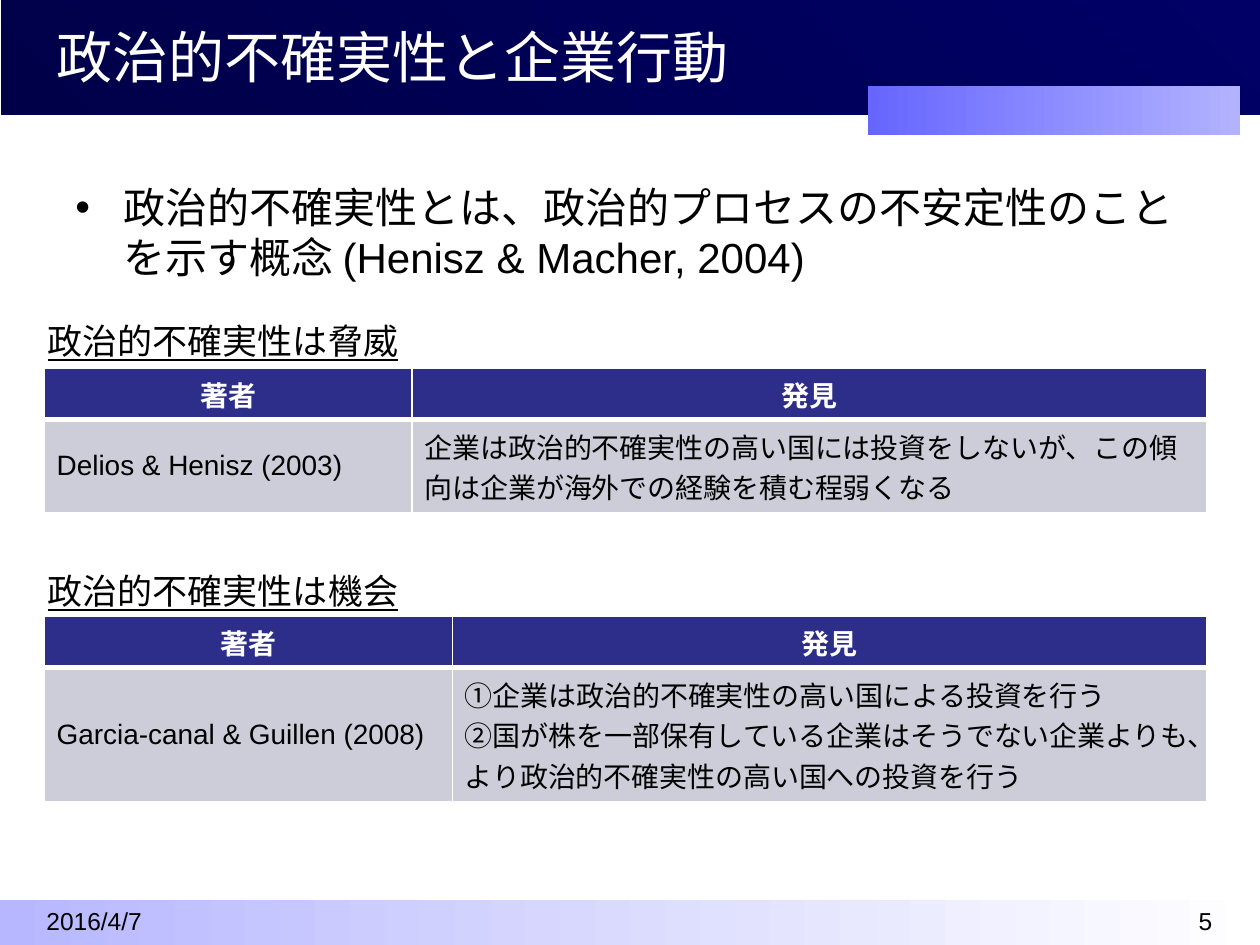
from lxml.etree import SubElement
from pptx import Presentation
from pptx.dml.color import RGBColor
from pptx.enum.shapes import MSO_SHAPE
from pptx.enum.text import MSO_ANCHOR, PP_ALIGN
from pptx.oxml.ns import qn
from pptx.util import Inches, Pt

WHITE = RGBColor(255, 255, 255)
BLACK = RGBColor(0, 0, 0)
HEAD = RGBColor(0x2D, 0x2D, 0x8A)
BODY = RGBColor(0xCD, 0xCD, 0xDA)
NAVY = RGBColor(0, 0, 0x49), RGBColor(0, 0, 0x66)
VIOLET = RGBColor(0x66, 0x66, 0xFF), RGBColor(0xB2, 0xB2, 0xFF)
PALE = RGBColor(0xB7, 0xB7, 0xFF), WHITE

TITLE = "政治的不確実性と企業行動"
POINT = "政治的不確実性とは、政治的プロセスの不安定性のことを示す概念 (Henisz & Macher, 2004)"
DATE, PAGE = "2016/4/7", "5"
HEADERS = "著者", "発見"

# left, top, width, height, gradient colours, angle
BANDS = [
    (0, 7.14, 10, 0.36, PALE, 0),
    (0.01, 0, 9.99, 0.91, NAVY, 45),
    (6.89, 0.68, 2.95, 0.39, VIOLET, 0),
]

LEFT, WIDE, ROW = 0.35, 9.23, 0.41
# caption, caption top, table top, author column, body row, author, findings
STUDIES = [
    ("政治的不確実性は脅威", 2.49, 2.92, 2.92, 0.74, "Delios & Henisz (2003)",
     ["企業は政治的不確実性の高い国には投資をしないが、この傾向は企業が海外での経験を積む程弱くなる"]),
    ("政治的不確実性は機会", 4.47, 4.89, 3.24, 1.06, "Garcia-canal & Guillen (2008)",
     ["①企業は政治的不確実性の高い国による投資を行う",
      "②国が株を一部保有している企業はそうでない企業よりも、より政治的不確実性の高い国への投資を行う"]),
]


def write(frame, lines, size, color=BLACK, align=PP_ALIGN.LEFT, bold=False, line=False):
    frame.word_wrap = True
    for i, words in enumerate(lines):
        para = frame.add_paragraph() if i else frame.paragraphs[0]
        para.alignment = align
        run = para.add_run()
        run.text = words
        font = run.font
        font.name, font.size, font.bold = "Arial", Pt(size), bold
        font.underline = line
        font.color.rgb = color


def box(slide, place, words, size, anchor=MSO_ANCHOR.TOP, **style):
    frame = slide.shapes.add_textbox(*map(Inches, place)).text_frame
    frame.vertical_anchor = anchor
    write(frame, [words], size, **style)
    return frame.paragraphs[0]


def band(slide, place, colors, angle):
    shape = slide.shapes.add_shape(MSO_SHAPE.RECTANGLE, *map(Inches, place))
    shape.shadow.inherit = False
    shape.line.fill.background()
    shape.fill.gradient()
    shape.fill.gradient_angle = angle
    for stop, color in zip(shape.fill.gradient_stops, colors):
        stop.color.rgb = color


def border(cell, **widths):
    props = cell._tc.get_or_add_tcPr()
    for side, width in widths.items():
        edge = SubElement(props, qn(f"a:ln{side}"), w=str(Pt(width)))
        fill = SubElement(edge, qn("a:solidFill"))
        SubElement(fill, qn("a:srgbClr"), val=str(WHITE))


def grid(slide, top, first, tall, author, findings):
    place = LEFT, top, WIDE, ROW + tall
    table = slide.shapes.add_table(2, 2, *map(Inches, place)).table
    for col, width in zip(table.columns, (first, WIDE - first)):
        col.width = Inches(width)
    for row, height in zip(table.rows, (ROW, tall)):
        row.height = Inches(height)
    for c, lines in enumerate(([author], findings)):
        head, cell = table.cell(0, c), table.cell(1, c)
        border(head, L=1, R=1, T=1, B=3)
        border(cell, L=1, R=1, T=3, B=1)
        for part, color in ((head, HEAD), (cell, BODY)):
            part.fill.solid()
            part.fill.fore_color.rgb = color
        write(head.text_frame, [HEADERS[c]], 16, WHITE, PP_ALIGN.CENTER, True)
        write(cell.text_frame, lines, 16)
    table.cell(1, 0).vertical_anchor = MSO_ANCHOR.MIDDLE


def bullet(para, indent):
    props = para._p.get_or_add_pPr()
    props.set("marL", str(Inches(indent)))
    props.set("indent", str(-Inches(indent)))
    para.space_before = Pt(4.8)
    SubElement(props, qn("a:buFont"), typeface="Arial")
    SubElement(props, qn("a:buChar"), char="•")


def main():
    deck = Presentation()
    deck.slide_width, deck.slide_height = Inches(10), Inches(7.5)
    slide = deck.slides.add_slide(deck.slide_layouts[5])
    for *place, colors, angle in BANDS:
        band(slide, place, colors, angle)

    title = slide.shapes.title
    title.left, title.top, title.width, title.height = map(Inches, (0.35, -0.02, 10, 0.93))
    title.text_frame.vertical_anchor = MSO_ANCHOR.MIDDLE
    write(title.text_frame, [TITLE], 32, WHITE)
    slide.shapes._spTree.append(title._element)  # in front of the bands

    bullet(box(slide, (0.5, 1.39, 9, 4.95), POINT, 24), 0.38)
    for caption, high, *rest in STUDIES:
        box(slide, (0.28, high, 6, 0.44), caption, 20, line=True)
        grid(slide, *rest)
    box(slide, (0.27, 7.16, 2.33, 0.29), DATE, 14, MSO_ANCHOR.MIDDLE)
    box(slide, (7.39, 7.16, 2.33, 0.29), PAGE, 14, MSO_ANCHOR.MIDDLE, align=PP_ALIGN.RIGHT)
    deck.save("out.pptx")


if __name__ == "__main__":
    main()
